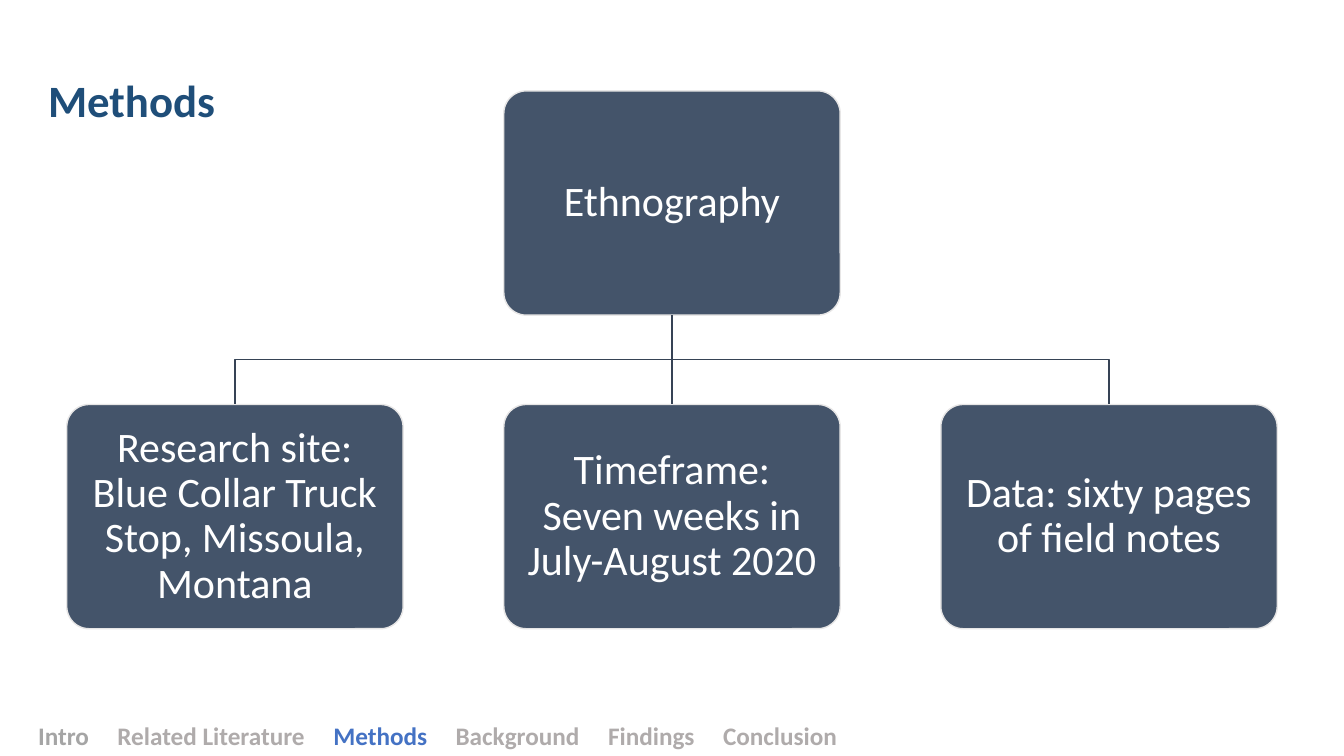
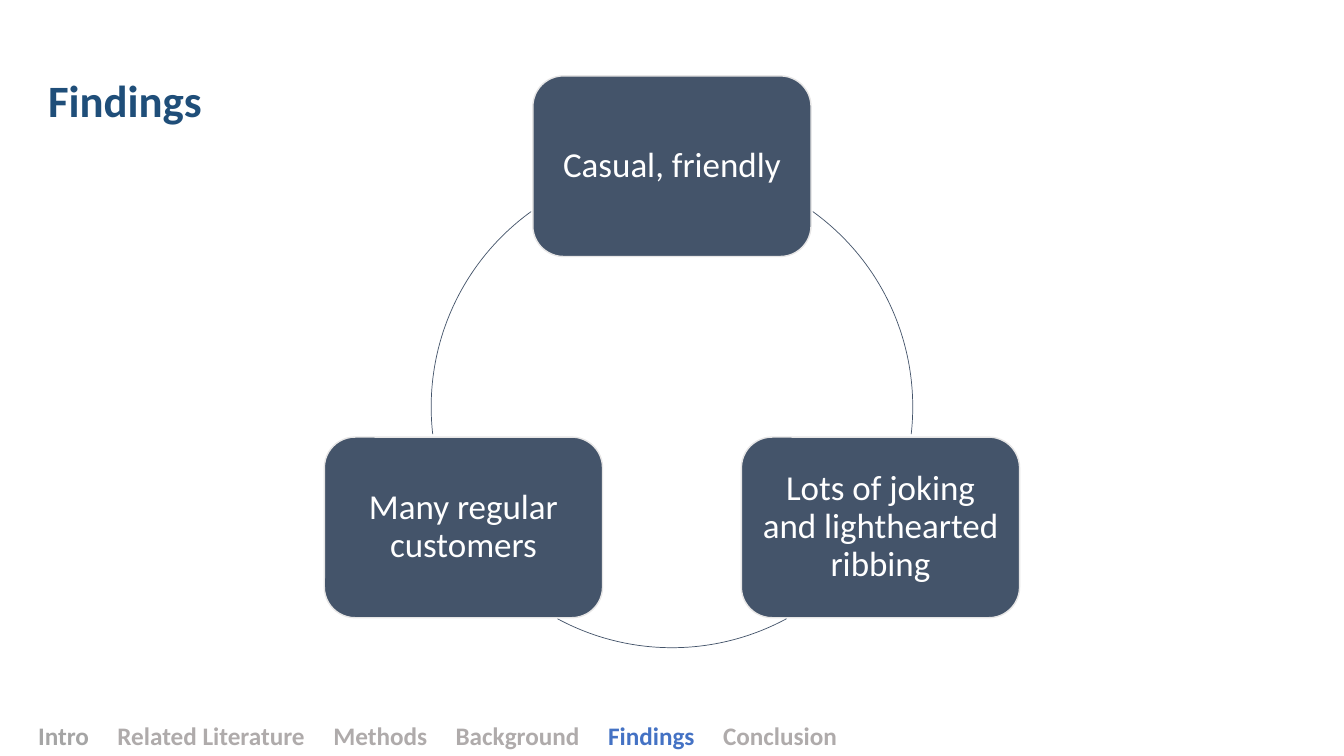
"""Build the Methods and Findings slides of an ethnography talk."""
from dataclasses import dataclass
from math import cos, radians, sin

from lxml import etree
from pptx import Presentation
from pptx.dml.color import RGBColor
from pptx.dml.line import LineFormat
from pptx.enum.shapes import MSO_CONNECTOR, MSO_SHAPE
from pptx.enum.text import MSO_ANCHOR, MSO_AUTO_SIZE, PP_ALIGN
from pptx.oxml.ns import qn
from pptx.presentation import Presentation as Deck
from pptx.shapes.autoshape import Shape
from pptx.slide import Slide
from pptx.text.text import Font, TextFrame
from pptx.util import Pt

ROUNDED = MSO_SHAPE.ROUNDED_RECTANGLE
ARC = MSO_SHAPE.ARC
STRAIGHT = MSO_CONNECTOR.STRAIGHT
LEFT, CENTER = PP_ALIGN.LEFT, PP_ALIGN.CENTER
TOP, MIDDLE, BOTTOM = MSO_ANCHOR.TOP, MSO_ANCHOR.MIDDLE, MSO_ANCHOR.BOTTOM
NO_AUTOFIT = MSO_AUTO_SIZE.NONE

SLIDE_WIDTH, SLIDE_HEIGHT = 960, 540
MID_X = SLIDE_WIDTH / 2
TITLE_ONLY = 5
TOP_SITE, BOTTOM_SITE = 0, 2

FONT = "Calibri"
NAVY, WHITE = "1F4E79", "FFFFFF"
SLATE, BOX_EDGE, BRANCH = "44546A", "E7E6E6", "364355"
ACTIVE = "4472C4"


@dataclass(frozen=True)
class Section:
    """One entry of the progress footer; offset is its tab stop."""

    name: str
    offset: float
    color: str = "AFABAB"


@dataclass(frozen=True)
class BoxStyle:
    """Size, corner and text settings shared by the boxes of a diagram."""

    width: float
    height: float
    corner: float
    text_size: float
    inset: float


SECTIONS = (
    Section("Intro", 0, "A5A5A5"),
    Section("Related Literature", 56.7),
    Section("Methods", 210.9),
    Section("Background", 298.3),
    Section("Findings", 407.2),
    Section("Conclusion", 489.3),
)

TREE_BOX = BoxStyle(240.3, 160.2, 0.1, 30, 9)
TREE_ROOT = "Ethnography"
TREE_LEAVES = (
    "Research site: Blue Collar Truck Stop, Missoula, Montana",
    "Timeframe: Seven weeks in July-August 2020",
    "Data: sixty pages of field notes",
)
ROOT_Y, LEAF_Y, LEAF_PITCH = 145, 369, 312.2

CYCLE_BOX = BoxStyle(198.7, 129, 0.17, 25, 7.5)
CYCLE_THEMES = ("Casual, friendly", "Lots of joking and lighthearted ribbing", "Many regular customers")
CYCLE_Y, CYCLE_RADIUS = 290.7, 172
CYCLE_ARCS = ((305.8, 6.5), (61.6, 118.4), (173.5, 234.2))


def rgb(value: str) -> RGBColor:
    """Turn a hex string into a colour."""
    return RGBColor.from_string(value)


def set_font(font: Font, size: float, color: str, bold: bool = False) -> None:
    """Apply the deck's typeface with a size, colour and weight."""
    font.name, font.size, font.bold = FONT, Pt(size), bold
    font.color.rgb = rgb(color)


def set_line(line: LineFormat, color: str, width: float) -> None:
    """Set the colour and width of a line."""
    line.color.rgb = rgb(color)
    line.width = Pt(width)


def set_frame(frame: TextFrame, anchor: MSO_ANCHOR, side: float, end: float) -> None:
    """Set wrapping, anchor, and side and end insets of a text frame."""
    frame.word_wrap = True
    frame.auto_size = NO_AUTOFIT
    frame.vertical_anchor = anchor
    frame.margin_left = frame.margin_right = Pt(side)
    frame.margin_top = frame.margin_bottom = Pt(end)


def add_title(slide: Slide, text: str) -> None:
    """Place and format the title placeholder."""
    title = slide.shapes.title
    title.left, title.top, title.width, title.height = Pt(0), Pt(0), Pt(303), Pt(93.8)
    set_frame(title.text_frame, BOTTOM, 34.3, 3.6)
    title.text_frame.text = text
    paragraph = title.text_frame.paragraphs[0]
    paragraph.alignment, paragraph.line_spacing = LEFT, 1.0
    paragraph.space_before = Pt(0)
    set_font(paragraph.font, 32, NAVY, bold=True)


def add_progress(slide: Slide, current: str) -> None:
    """Write the section names along the bottom, highlighting the current one."""
    footer = slide.shapes.add_textbox(Pt(0), Pt(511), Pt(667), Pt(29))
    set_frame(footer.text_frame, TOP, 27.2, 3.6)
    paragraph = footer.text_frame.paragraphs[0]
    tab_list = etree.SubElement(paragraph._p.get_or_add_pPr(), qn("a:tabLst"))
    for section in SECTIONS:
        run = paragraph.add_run()
        run.text = section.name
        if section.offset:
            run.text = f"\t{section.name}"
            etree.SubElement(tab_list, qn("a:tab"), pos=str(Pt(section.offset)), algn="l")
        run.font.color.rgb = rgb(ACTIVE if section.name == current else section.color)
    set_font(paragraph.font, 18, NAVY, bold=True)


def add_box(slide: Slide, text: str, x: float, y: float, style: BoxStyle) -> Shape:
    """Draw a rounded box with centred text around the point x, y."""
    box = slide.shapes.add_shape(
        ROUNDED, Pt(x - style.width / 2), Pt(y - style.height / 2), Pt(style.width), Pt(style.height))
    box.adjustments[0] = style.corner
    box.shadow.inherit = False
    box.fill.solid()
    box.fill.fore_color.rgb = rgb(SLATE)
    set_line(box.line, BOX_EDGE, 1)
    set_frame(box.text_frame, MIDDLE, style.inset, style.inset)
    box.text_frame.text = text
    paragraph = box.text_frame.paragraphs[0]
    paragraph.alignment, paragraph.line_spacing = CENTER, 0.9
    set_font(paragraph.font, style.text_size, WHITE)
    return box


def add_straight_branch(slide: Slide, root: Shape, leaf: Shape) -> None:
    """Connect the root to the leaf right below it."""
    branch = slide.shapes.add_connector(STRAIGHT, 0, 0, 0, 0)
    branch.begin_connect(root, BOTTOM_SITE)
    branch.end_connect(leaf, TOP_SITE)
    set_line(branch.line, BRANCH, 1)
    etree.SubElement(branch._element.spPr, qn("a:effectLst"))


def add_bent_branch(slide: Slide, x: float) -> None:
    """Draw a branch from the root that turns twice to reach a leaf at x."""
    start_y = ROOT_Y + TREE_BOX.height / 2
    end_y = LEAF_Y - TREE_BOX.height / 2
    bend_y = (start_y + end_y) / 2
    outline = slide.shapes.build_freeform(Pt(MID_X), Pt(start_y))
    corners = ((MID_X, bend_y), (x, bend_y), (x, end_y))
    outline.add_line_segments([(Pt(across), Pt(down)) for across, down in corners], close=False)
    branch = outline.convert_to_shape()
    branch.shadow.inherit = False
    branch.fill.background()
    set_line(branch.line, BRANCH, 1)


def add_cycle_arc(slide: Slide, start: float, end: float) -> None:
    """Draw a clockwise arc of the cycle between two angles in degrees."""
    arc = slide.shapes.add_shape(
        ARC, Pt(MID_X - CYCLE_RADIUS), Pt(CYCLE_Y - CYCLE_RADIUS), Pt(2 * CYCLE_RADIUS), Pt(2 * CYCLE_RADIUS))
    for index, angle in enumerate((start, end)):
        arc.adjustments[index] = angle * 0.6
    arc.shadow.inherit = False
    arc.fill.background()
    set_line(arc.line, SLATE, 0.5)


def add_section_slide(deck: Deck, name: str) -> Slide:
    """Add a slide with its title and progress footer."""
    slide = deck.slides.add_slide(deck.slide_layouts[TITLE_ONLY])
    add_title(slide, name)
    add_progress(slide, name)
    return slide


def build_methods(deck: Deck) -> None:
    """Build the Methods slide with its tree."""
    slide = add_section_slide(deck, "Methods")
    root = add_box(slide, TREE_ROOT, MID_X, ROOT_Y, TREE_BOX)
    for index, text in enumerate(TREE_LEAVES):
        x = MID_X + (index - 1) * LEAF_PITCH
        leaf = add_box(slide, text, x, LEAF_Y, TREE_BOX)
        if x == MID_X:
            add_straight_branch(slide, root, leaf)
        else:
            add_bent_branch(slide, x)


def build_findings(deck: Deck) -> None:
    """Build the Findings slide with its cycle."""
    slide = add_section_slide(deck, "Findings")
    for index, (text, arc) in enumerate(zip(CYCLE_THEMES, CYCLE_ARCS)):
        angle = radians(index * 360 / len(CYCLE_THEMES) - 90)
        x = MID_X + CYCLE_RADIUS * cos(angle)
        y = CYCLE_Y + CYCLE_RADIUS * sin(angle)
        add_box(slide, text, x, y, CYCLE_BOX)
        add_cycle_arc(slide, *arc)


def main() -> None:
    """Build and save the deck."""
    deck = Presentation()
    deck.slide_width, deck.slide_height = Pt(SLIDE_WIDTH), Pt(SLIDE_HEIGHT)
    build_methods(deck)
    build_findings(deck)
    deck.save("out.pptx")


if __name__ == "__main__":
    main()
